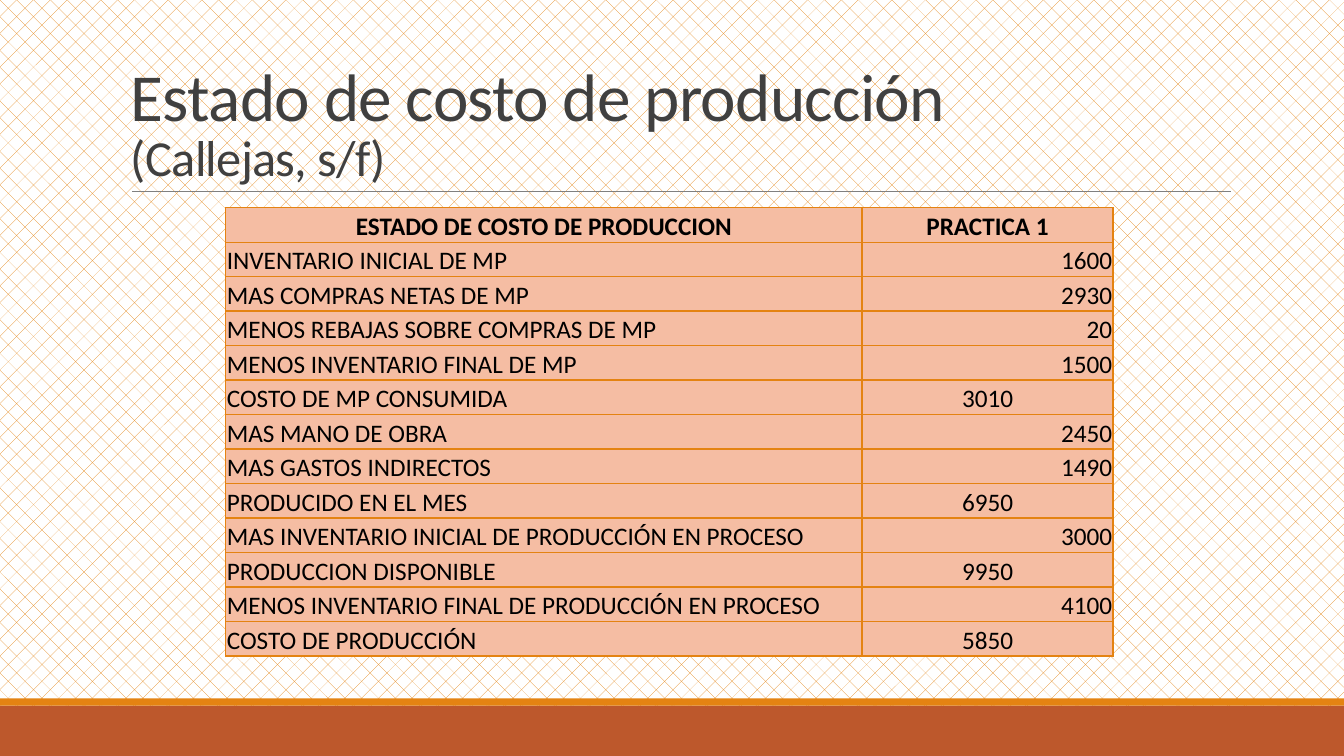
from dataclasses import dataclass

from lxml import etree
from pptx import Presentation
from pptx import util as u
from pptx.dml import color
from pptx.enum import dml, shapes, text
from pptx.oxml import ns

FONT = "Calibri"
ORANGE = "E48312"
RUST = "BD582C"
PEACH = "F5BDA3"
BLACK = "000000"
LEFT = text.PP_ALIGN.LEFT
CENTER = text.PP_ALIGN.CENTER
RIGHT = text.PP_ALIGN.RIGHT


@dataclass(frozen=True)
class Band:
    top: float
    height: float
    fill: str


@dataclass(frozen=True)
class CostLine:
    concept: str
    amount: str
    subtotal: bool = False


BANDS = [Band(7, 0.5, RUST), Band(6.93, 0.07, ORANGE)]

COST_LINES = [
    CostLine("INVENTARIO INICIAL DE MP", "1600"),
    CostLine("MAS COMPRAS NETAS DE MP", "2930"),
    CostLine("MENOS REBAJAS SOBRE COMPRAS DE MP", "20"),
    CostLine("MENOS INVENTARIO FINAL DE MP", "1500"),
    CostLine("COSTO DE MP CONSUMIDA", "3010", subtotal=True),
    CostLine("MAS MANO DE OBRA", "2450"),
    CostLine("MAS GASTOS INDIRECTOS", "1490"),
    CostLine("PRODUCIDO EN EL MES", "6950", subtotal=True),
    CostLine("MAS INVENTARIO INICIAL DE PRODUCCIÓN EN PROCESO", "3000"),
    CostLine("PRODUCCION DISPONIBLE", "9950", subtotal=True),
    CostLine("MENOS INVENTARIO FINAL DE PRODUCCIÓN EN PROCESO", "4100"),
    CostLine("COSTO DE PRODUCCIÓN", "5850", subtotal=True),
]


def rgb(value: str) -> color.RGBColor:
    return color.RGBColor.from_string(value)


def add_text(paragraph, content: str, *, size: float, ink: str = BLACK,
             bold: bool = False, align=LEFT, tracking: int = 0) -> None:
    paragraph.alignment = align
    run = paragraph.add_run()
    run.text = content
    run.font.name = FONT
    run.font.size = u.Pt(size)
    run.font.bold = bold
    run.font.color.rgb = rgb(ink)
    if tracking:
        run.font._element.set("spc", str(tracking))


def draw_background(slide) -> None:
    fill = slide.background.fill
    fill.patterned()
    fill.pattern = dml.MSO_PATTERN.DOTTED_DIAMOND
    fill.fore_color.rgb = rgb(ORANGE)
    fill.back_color.rgb = rgb("FFFFFF")


def draw_band(slide, band: Band, width: float) -> None:
    strip = slide.shapes.add_shape(
        shapes.MSO_SHAPE.RECTANGLE, 0, u.Inches(band.top),
        u.Inches(width), u.Inches(band.height))
    strip.shadow.inherit = False
    strip.fill.solid()
    strip.fill.fore_color.rgb = rgb(band.fill)
    strip.line.fill.background()


def draw_title_rule(slide) -> None:
    rule = slide.shapes.add_connector(
        shapes.MSO_CONNECTOR.STRAIGHT, u.Inches(1.31), u.Inches(1.9),
        u.Inches(12.21), u.Inches(1.9))
    rule.line.color.rgb = rgb("808080")
    rule.line.width = u.Pt(0.5)
    etree.SubElement(rule._element.spPr, ns.qn("a:effectLst"))


def draw_title(slide) -> None:
    frame = slide.shapes.add_textbox(
        u.Inches(1.2), u.Inches(0.31), u.Inches(11), u.Inches(1.59)).text_frame
    frame.word_wrap = True
    frame.vertical_anchor = text.MSO_ANCHOR.BOTTOM
    heading = frame.paragraphs[0]
    heading.line_spacing = 0.85
    add_text(heading, "Estado de costo de producción", size=48,
             ink="404040", tracking=-50)
    heading.add_line_break()
    add_text(heading, "(Callejas, s/f)", size=36, ink="404040", tracking=-50)


def add_borders(cell) -> None:
    properties = cell._tc.get_or_add_tcPr()
    for position, side in enumerate(("lnL", "lnR", "lnT", "lnB")):
        border = etree.Element(ns.qn(f"a:{side}"), w=str(u.Pt(1)))
        fill = etree.SubElement(border, ns.qn("a:solidFill"))
        etree.SubElement(fill, ns.qn("a:srgbClr"), val=ORANGE)
        properties.insert(position, border)


def fill_cell(cell, content: str, align, bold: bool) -> None:
    cell.margin_left = cell.margin_right = cell.margin_top = u.Inches(0.01)
    cell.margin_bottom = 0
    cell.vertical_anchor = text.MSO_ANCHOR.BOTTOM
    cell.fill.solid()
    cell.fill.fore_color.rgb = rgb(PEACH)
    add_borders(cell)
    add_text(cell.text_frame.paragraphs[0], content, size=18,
             bold=bold, align=align)


def draw_statement(slide) -> None:
    header = CostLine("ESTADO DE COSTO DE PRODUCCION", "PRACTICA 1")
    lines = [header, *COST_LINES]
    statement = slide.shapes.add_table(
        len(lines), 2, u.Inches(2.24), u.Inches(2.06),
        u.Inches(8.8), u.Inches(4.45)).table
    statement.first_row = False
    statement.horz_banding = False
    for column, width in zip(statement.columns, (6.31, 2.49)):
        column.width = u.Inches(width)
    for index, line in enumerate(lines):
        is_header = line is header
        amount_align = CENTER if is_header or line.subtotal else RIGHT
        fill_cell(statement.cell(index, 0), line.concept,
                  CENTER if is_header else LEFT, is_header)
        fill_cell(statement.cell(index, 1), line.amount,
                  amount_align, is_header)


def main() -> None:
    deck = Presentation()
    slide_width = 13.33
    deck.slide_width = u.Inches(slide_width)
    deck.slide_height = u.Inches(7.5)
    slide = deck.slides.add_slide(deck.slide_layouts[6])
    draw_background(slide)
    for band in BANDS:
        draw_band(slide, band, slide_width)
    draw_title_rule(slide)
    draw_title(slide)
    draw_statement(slide)
    deck.save("out.pptx")


if __name__ == "__main__":
    main()
